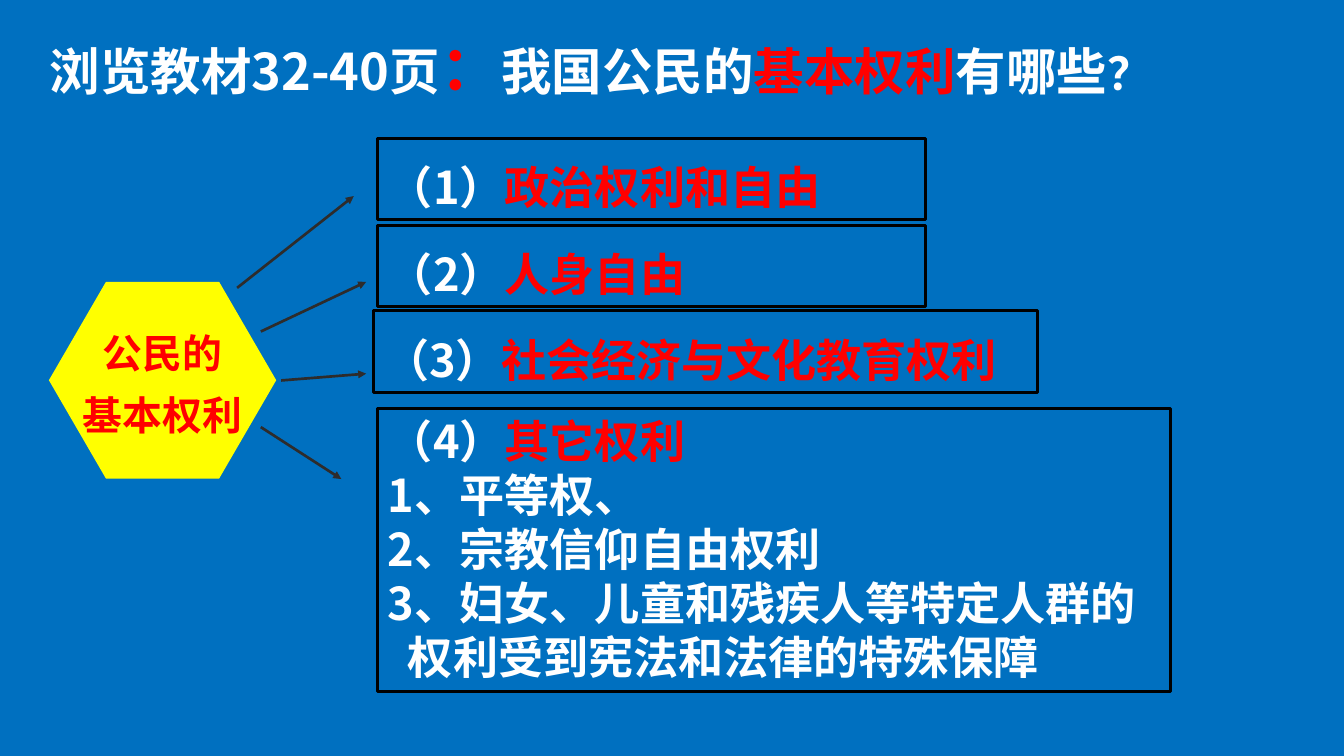
from lxml import etree
from pptx import Presentation
from pptx import util as u
from pptx.dml.color import RGBColor
from pptx.enum import shapes, text
from pptx.oxml.ns import qn

BLUE = RGBColor(0x00, 0x70, 0xC0)
YELLOW = RGBColor(0xFF, 0xFF, 0x00)
RED = RGBColor(0xFF, 0x00, 0x00)
WHITE = RGBColor(0xFF, 0xFF, 0xFF)
BLACK = RGBColor(0x00, 0x00, 0x00)
GREY = RGBColor(0x2E, 0x2C, 0x2C)
FONT = "Noto Sans CJK SC"

# Content: each paragraph is a list of (text, colour, size) runs
TITLE = [[
    ("浏览教材32-40页", WHITE, 38), ("：", RED, 46), ("我国公民的", WHITE, 38),
    ("基本权利", RED, 38), ("有哪些", WHITE, 38), ("？", WHITE, 34),
]]
TOPIC = [[("公民的", RED, 30)], [("基本权利", RED, 30)]]
RIGHTS = ["政治权利和自由", "人身自由", "社会经济与文化教育权利", "其它权利"]
OTHER_RIGHTS = [
    "平等权、",
    "宗教信仰自由权利",
    "妇女、儿童和残疾人等特定人群的权利受到宪法和法律的特殊保障",
]

# Layout in centimetres: left, top, width, height
TITLE_AREA = (1.04, 0.64, 30.07, 2.24)
HEXAGON_AREA = (1.3, 7.49, 6.04, 5.23)
TOPIC_AREA = (1.7, 8.23, 5.23, 3.61)
RIGHT_AREAS = [
    (10.03, 3.68, 14.55, 2.16),
    (10.03, 5.99, 14.55, 2.16),
    (9.93, 8.26, 17.65, 2.16),
    (10.03, 10.85, 21.08, 7.54),
]
# Start x, start y, end x, end y
ARROWS = [
    (6.3, 7.65, 9.4, 5.21),
    (6.93, 8.81, 9.73, 7.49),
    (7.47, 10.11, 9.73, 9.93),
    (6.93, 11.35, 9.07, 12.73),
]
HANGING = 0.53


def cm(lengths):
    return [u.Cm(length) for length in lengths]


def write(shape, paragraphs, line_pitch, align=text.PP_ALIGN.LEFT, top_inset=0.13):
    frame = shape.text_frame
    frame.word_wrap = True
    frame.auto_size = text.MSO_AUTO_SIZE.NONE
    frame.vertical_anchor = text.MSO_ANCHOR.TOP
    frame.margin_left = frame.margin_right = u.Cm(0.28)
    frame.margin_top, frame.margin_bottom = u.Cm(top_inset), u.Cm(0.13)
    for index, runs in enumerate(paragraphs):
        paragraph = frame.add_paragraph() if index else frame.paragraphs[0]
        paragraph.alignment = align
        paragraph.line_spacing = u.Pt(line_pitch)
        paragraph.space_before = paragraph.space_after = u.Pt(0)
        for words, colour, size in runs:
            run = paragraph.add_run()
            run.text = words
            run.font.name, run.font.size, run.font.bold = FONT, u.Pt(size), True
            run.font.color.rgb = colour
            # East Asian typeface
            etree.SubElement(run.font._element, qn("a:ea"), typeface=FONT)


def add_arrow(slide, ends):
    arrow = slide.shapes.add_connector(shapes.MSO_CONNECTOR.STRAIGHT, *cm(ends))
    arrow.line.color.rgb = GREY
    arrow.line.width = u.Pt(0)
    etree.SubElement(arrow.line._get_or_add_ln(), qn("a:tailEnd"), type="triangle")
    etree.SubElement(arrow._element.spPr, qn("a:effectLst"))


def add_right_box(slide, area, paragraphs, line_pitch):
    box = slide.shapes.add_shape(shapes.MSO_SHAPE.RECTANGLE, *cm(area))
    box.shadow.inherit = False
    box.fill.background()
    box.line.color.rgb = BLACK
    box.line.width = u.Pt(2.25)
    write(box, paragraphs, line_pitch)
    return box


def main():
    presentation = Presentation()
    presentation.slide_width, presentation.slide_height = u.Cm(35.71), u.Cm(20.09)
    slide = presentation.slides.add_slide(presentation.slide_layouts[5])
    slide.background.fill.solid()
    slide.background.fill.fore_color.rgb = BLUE

    # Title
    title = slide.shapes.title
    title.left, title.top, title.width, title.height = cm(TITLE_AREA)
    write(title, TITLE, 45.5, top_inset=0.48)

    # Topic hexagon and its label
    hexagon = slide.shapes.add_shape(shapes.MSO_SHAPE.HEXAGON, *cm(HEXAGON_AREA))
    hexagon.adjustments[0] = 0.29
    hexagon.shadow.inherit = False
    hexagon.fill.solid()
    hexagon.fill.fore_color.rgb = YELLOW
    hexagon.line.fill.background()
    label = slide.shapes.add_textbox(*cm(TOPIC_AREA))
    write(label, TOPIC, 46.5, text.PP_ALIGN.CENTER)

    # Arrows to the rights
    for ends in ARROWS:
        add_arrow(slide, ends)

    # Boxes of rights; the last one also lists its members
    headings = [
        [(f"（{number}）", WHITE, 34), (right, RED, 34)]
        for number, right in enumerate(RIGHTS, 1)
    ]
    for area, heading in zip(RIGHT_AREAS[:-1], headings):
        add_right_box(slide, area, [heading], 53)
    members = [
        [(f"{number}、{right}", WHITE, 34)]
        for number, right in enumerate(OTHER_RIGHTS, 1)
    ]
    last_box = add_right_box(slide, RIGHT_AREAS[-1], [headings[-1], *members], 40.8)

    # Hanging indent for the member that wraps
    properties = last_box.text_frame.paragraphs[-1]._p.get_or_add_pPr()
    properties.set("marL", str(u.Cm(HANGING)))
    properties.set("indent", str(-u.Cm(HANGING)))

    presentation.save("out.pptx")


if __name__ == "__main__":
    main()
